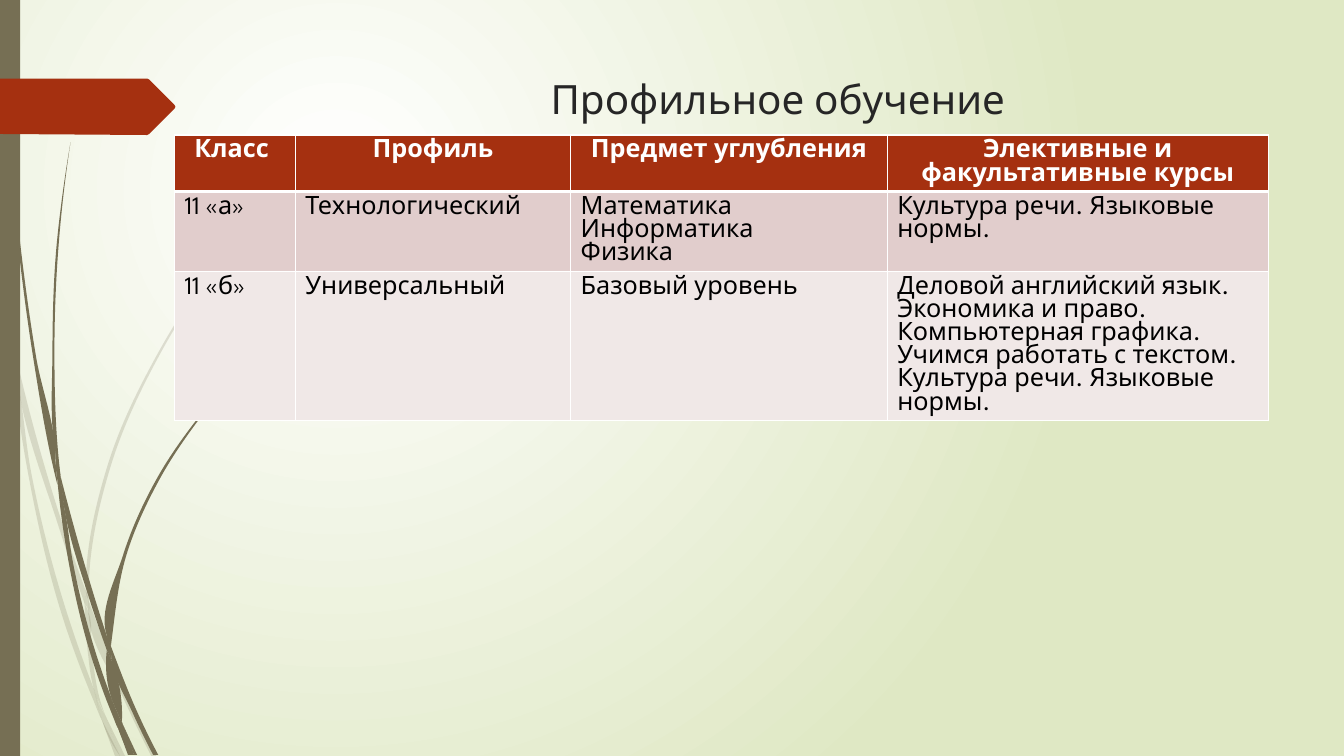
"""Build the slide about specialised classes: a table beside wispy grass strands."""
from dataclasses import dataclass
from math import dist

from lxml.etree import SubElement
from pptx import Presentation
from pptx.dml.color import RGBColor as RGB
from pptx.enum.shapes import MSO_SHAPE as SHAPE
from pptx.enum.text import MSO_ANCHOR as ANCHOR, PP_ALIGN as ALIGN
from pptx.oxml.ns import qn
from pptx.util import Inches, Pt

COLORS = {
    "white": "FFFFFF", "black": "000000", "title": "262626", "grass": "766F54",
    "red": "A53010", "band1": "E1CDCC", "band2": "F0E8E7", "meadow": "DFE8C4",
}
FONT = "League Spartan"
Point = tuple[float, float]


@dataclass
class Strand:
    """One blade piece, outlined by two smooth edges."""
    out: list[Point]
    back: list[Point]


@dataclass
class Row:
    """One table row with its look."""
    cells: list[str]
    fill: str
    color: str = "black"
    bold: bool = False
    align: ALIGN = ALIGN.LEFT
    bottom: float = 1


PALE = [
    Strand([(0.11, 3.5), (0.09, 3.22), (0, 2.82)], [(0, 2.99), (0.1, 3.44)]),
    Strand([(0.14, 3.45), (0.62, 5.2), (0.85, 5.86)], [(0.84, 5.99), (0.58, 5.22), (0.17, 3.76)]),
    Strand([(0.88, 5.96), (0.92, 6.07), (1.27, 6.92), (1.55, 7.5)],
           [(1.5, 7.5), (1.23, 6.94), (0.88, 6.1)]),
    Strand([(1.05, 7.11), (1.24, 7.5)], [(1.19, 7.5)]),
    Strand([(0.11, 3.5), (0.17, 3.76), (0.31, 4.69), (0.7, 6.19), (0.93, 6.83)],
           [(0.99, 7.07), (1.01, 7.14), (0.92, 6.93), (0.65, 6.21), (0.28, 4.7)]),
    Strand([(0.84, 5.99), (0.88, 6.08), (0.91, 6.46), (1.03, 7.06), (1.05, 7.11)],
           [(0.96, 6.92), (0.93, 6.83), (0.87, 6.46)]),
    Strand([(0.88, 5.96), (0.88, 5.84), (1.1, 4.62), (1.6, 3.49), (2.29, 2.45), (2.68, 1.98),
            (2.9, 1.75), (3.12, 1.54)],
           [(3.12, 1.53), (2.89, 1.75), (2.68, 1.97), (2.28, 2.44), (1.58, 3.48), (1.07, 4.61),
            (0.85, 5.84), (0.85, 5.86)]),
    Strand([(1.01, 7.14), (1.14, 7.5)], [(1.19, 7.5)]),
    Strand([(0.88, 6.1), (0.88, 5.96), (0.85, 5.86)], [(0.84, 5.99), (0.88, 6.08)]),
    Strand([(0.93, 6.83), (0.99, 7.07), (1.01, 7.14), (1.19, 7.5)], [(1.05, 7.11), (0.96, 6.92)]),
]
DARK = [
    Strand([(0.03, 0), (0.04, 0.48), (0.07, 1.1), (0.17, 2.33), (0.33, 3.55), (0.56, 4.77),
            (0.57, 4.81)],
           [(0.55, 4.57), (0.55, 4.53), (0.36, 3.55), (0.19, 2.32), (0.08, 1.09), (0.05, 0.48),
            (0.04, 0)]),
    Strand([(0.6, 4.72), (0.93, 5.9), (1.06, 6.31)], [(1.06, 6.45), (0.88, 5.92), (0.64, 5.05)]),
    Strand([(1.1, 6.41), (1.13, 6.49), (1.36, 7.06), (1.57, 7.49)],
           [(1.52, 7.49), (1.32, 7.08), (1.11, 6.56)]),
    Strand([(0.57, 4.77), (0.64, 5.05), (0.72, 5.56), (0.98, 6.57), (1.1, 6.91)],
           [(1.16, 7.17), (1.17, 7.22), (1.11, 7.08), (0.93, 6.59), (0.68, 5.57)]),
    Strand([(0.6, 4.72), (0.58, 4.53), (0.54, 3.49), (0.58, 2.45), (0.63, 1.93), (0.7, 1.41)],
           [(0.7, 1.41), (0.62, 1.93), (0.56, 2.45), (0.52, 3.49), (0.55, 4.49)]),
    Strand([(1.22, 7.19), (1.36, 7.49)], [(1.33, 7.49)]),
    Strand([(0.55, 4.53), (0.57, 4.77), (0.64, 5.05)], [(0.6, 4.72), (0.55, 4.49)]),
    Strand([(1.1, 6.41), (1.11, 6.33), (1.25, 5.52), (1.58, 4.76), (2.05, 4.06), (2.31, 3.74),
            (2.61, 3.44)],
           [(2.6, 3.44), (2.31, 3.73), (2.04, 4.05), (1.56, 4.74), (1.22, 5.51), (1.06, 6.31)]),
    Strand([(1.17, 7.22), (1.27, 7.49)], [(1.31, 7.49)]),
    Strand([(1.06, 6.45), (1.1, 6.91), (1.16, 7.06), (1.22, 7.19)], [(1.21, 7.16), (1.11, 6.56)]),
    Strand([(1.06, 6.45), (1.11, 6.56)], [(1.1, 6.41), (1.06, 6.31)]),
    Strand([(1.1, 6.91), (1.17, 7.22), (1.3, 7.49)], [(1.33, 7.49), (1.22, 7.19), (1.16, 7.06)]),
]
RIBBON = [(0, 0.78), (1.46, 0.78), (1.48, 0.79), (1.73, 1.04), (1.74, 1.06),
          (1.73, 1.08), (1.48, 1.33), (1.46, 1.34), (0, 1.33)]
COLUMNS = [1.2, 2.73, 3.14, 3.78]
ROWS = [
    Row(["Класс ", "Профиль", "Предмет углубления", "Элективные и факультативные курсы"],
        "red", "white", True, ALIGN.CENTER, 3),
    Row(["11 «а»", "Технологический", "Математика\nИнформатика\nФизика",
         "Культура речи. Языковые нормы."], "band1"),
    Row(["11 «б»", "Универсальный", "Базовый уровень",
         "Деловой английский язык.\nЭкономика и право.\nКомпьютерная графика.\n"
         "Учимся работать с текстом.\nКультура речи. Языковые нормы."], "band2"),
]


def rgb(name: str) -> RGB:
    """Look up a named colour."""
    return RGB.from_string(COLORS[name])


def paint(sp, color: str, alpha: int = 100) -> None:
    """Give a shape a plain fill with no line or shadow."""
    sp.shadow.inherit = False
    sp.fill.solid()
    sp.fill.fore_color.rgb = rgb(color)
    sp.line.fill.background()
    if alpha < 100:
        clr = sp.fill._xPr.find(qn("a:solidFill"))[0]
        SubElement(clr, qn("a:alpha"), val=str(alpha * 1000))


def add_outline(shapes, pts: list[Point], color: str, alpha: int = 100):
    """Draw a closed filled outline and return it."""
    start, *rest = [(Inches(x), Inches(y)) for x, y in pts]
    builder = shapes.build_freeform(*start)
    builder.add_line_segments(rest, close=True)
    sp = builder.convert_to_shape()
    paint(sp, color, alpha)
    return sp


def tangents(pts: list[Point]) -> list[Point]:
    """Return the slope per unit of length at each point of a smooth edge."""
    gaps = [dist(a, b) for a, b in zip(pts, pts[1:])]
    slopes = [((c - a) / g, (d - b) / g) for (a, b), (c, d), g in zip(pts, pts[1:], gaps)]
    inner = [tuple((h * u + g * v) / (g + h) for u, v in zip(p, q))
             for p, q, g, h in zip(slopes, slopes[1:], gaps, gaps[1:])]
    first, last = [tuple(2 * u - v for u, v in zip(slopes[i], (inner or slopes)[i]))
                   for i in (0, -1)]
    return [first, *inner, last]


def bend(steps: list, pts: list[Point]) -> None:
    """Turn the straight steps between the points into smooth curves."""
    slopes = tangents(pts)
    for step, a, b, u, v in zip(steps, pts, pts[1:], slopes, slopes[1:]):
        third = dist(a, b) / 3
        step.tag = qn("a:cubicBezTo")
        for i, (q, t, k) in enumerate(((a, u, third), (b, v, -third))):
            x, y = (str(round(c + s * k)) for c, s in zip(q, t))
            step.insert(i, step.makeelement(qn("a:pt"), {"x": x, "y": y}))


def add_strands(s, strands: list[Strand], alpha: int) -> None:
    """Draw a group of grass strands."""
    group = s.shapes.add_group_shape()
    for strand in strands:
        pts = strand.out + strand.back + strand.out[:1]
        sp = add_outline(group.shapes, pts, "grass", alpha)
        outline = sp._element.find(".//" + qn("a:pathLst"))[0]
        local = [(int(pt.get("x")), int(pt.get("y"))) for pt in outline.iter(qn("a:pt"))]
        steps = outline.findall(qn("a:lnTo"))
        turn = len(strand.out)
        bend(steps[:turn - 1], local[:turn])
        bend(steps[turn:], local[turn:len(pts)])


def set_background(s) -> None:
    """Fill the background with a round gradient centred at upper left."""
    fill = s.background.fill
    fill.gradient()
    for stop, name in zip(fill.gradient_stops, ("white", "meadow")):
        stop.color.rgb = rgb(name)
    grad = s.background._cSld.find(".//" + qn("a:gradFill"))
    grad.remove(grad.find(qn("a:lin")))
    circle = SubElement(grad, qn("a:path"), {"path": "circle"})
    SubElement(circle, qn("a:fillToRect"), l="50000", t="50000", r="100000", b="100000")


def style_text(tf, size: float, color: str, align: ALIGN, bold: bool = False) -> None:
    """Format every paragraph and run of a text frame."""
    for p in tf.paragraphs:
        p.alignment = align
        for r in p.runs:
            r.font.name, r.font.size, r.font.bold = FONT, Pt(size), bold
            r.font.color.rgb = rgb(color)


def add_title(s, text: str) -> None:
    """Place and format the title."""
    title = s.shapes.title
    title.left, title.top, title.width, title.height = map(Inches, (2.84, 0.68, 9.75, 0.51))
    tf = title.text_frame
    tf.text = text
    tf.vertical_anchor = ANCHOR.TOP
    tf.margin_top = Inches(0.06)
    style_text(tf, 28.8, "title", ALIGN.CENTER)


def add_border(cell, side: str, width: float) -> None:
    """Add a white border to one side of a cell."""
    ln = SubElement(cell._tc.get_or_add_tcPr(), qn(f"a:ln{side}"), w=str(Pt(width)))
    SubElement(SubElement(ln, qn("a:solidFill")), qn("a:srgbClr"), val=COLORS["white"])


def add_classes_table(s) -> None:
    """Draw the table of classes, profiles and courses."""
    table = s.shapes.add_table(len(ROWS), len(COLUMNS), Inches(1.73), Inches(1.34),
                               Inches(sum(COLUMNS)), Inches(0.41 * len(ROWS))).table
    for column, width in zip(table.columns, COLUMNS):
        column.width = Inches(width)
    for i, row in enumerate(ROWS):
        top = ROWS[i - 1].bottom if i else 1
        for cell, text in zip(table.rows[i].cells, row.cells):
            cell.text_frame.text = text
            style_text(cell.text_frame, 18, row.color, row.align, row.bold)
            for side, width in zip("LRTB", (1, 1, top, row.bottom)):
                add_border(cell, side, width)
            cell.fill.solid()
            cell.fill.fore_color.rgb = rgb(row.fill)


def main() -> None:
    """Build and save the slide."""
    prs = Presentation()
    prs.slide_width, prs.slide_height = Inches(13.33), Inches(7.5)
    s = prs.slides.add_slide(prs.slide_layouts[5])
    set_background(s)
    add_strands(s, PALE, 20)
    add_strands(s, DARK, 100)
    paint(s.shapes.add_shape(SHAPE.RECTANGLE, 0, 0, Inches(0.2), prs.slide_height), "grass")
    add_outline(s.shapes, RIBBON, "red")
    add_title(s, "Профильное обучение")
    add_classes_table(s)
    prs.save("out.pptx")


if __name__ == "__main__":
    main()
